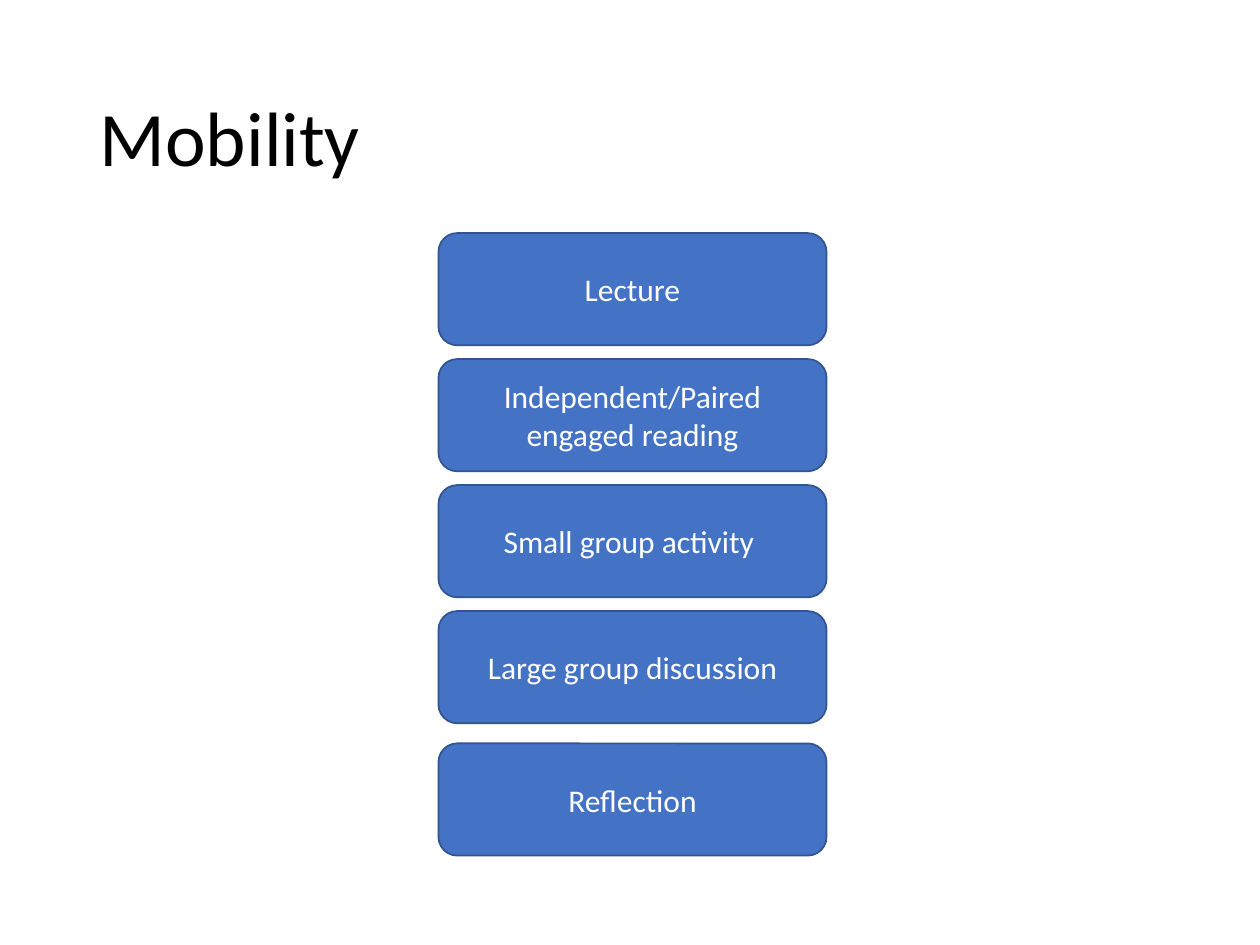
"""Build the Mobility slide: a title above a column of lesson stages."""
from pptx import Presentation
from pptx import util as u
from pptx.dml.color import RGBColor
from pptx.enum import shapes, text

TITLE = "Mobility"
STAGES = [
    ("Lecture", 1.85),
    ("Independent/Paired engaged reading", 2.85),
    ("Small group activity ", 3.85),
    ("Large group discussion", 4.85),
    ("Reflection", 5.9),
]
COLORS = {"title": "000000", "fill": "4472C4", "line": "325491", "label": "FFFFFF"}
STAGE_LEFT, STAGE_WIDTH, STAGE_HEIGHT = 3.48, 3.08, 0.89


def color(role):
    return RGBColor.from_string(COLORS[role])


def write(holder, wording, size, role, align, spacing=1.0):
    frame = holder.text_frame
    frame.word_wrap = True
    frame.auto_size = text.MSO_AUTO_SIZE.NONE
    frame.vertical_anchor = text.MSO_ANCHOR.MIDDLE
    line = frame.paragraphs[0]
    line.alignment = align
    line.line_spacing = spacing
    run = line.add_run()
    run.text = wording
    run.font.name = "Calibri"
    run.font.size = u.Pt(size)
    run.font.color.rgb = color(role)


def add_stage(slide, wording, top):
    stage = slide.shapes.add_shape(
        shapes.MSO_SHAPE.ROUNDED_RECTANGLE,
        *map(u.Inches, (STAGE_LEFT, top, STAGE_WIDTH, STAGE_HEIGHT)))
    stage.shadow.inherit = False
    stage.fill.solid()
    stage.fill.fore_color.rgb = color("fill")
    stage.line.color.rgb = color("line")
    stage.line.width = u.Pt(1)
    write(stage, wording, size=18, role="label", align=text.PP_ALIGN.CENTER)


def main():
    deck = Presentation()
    deck.slide_width, deck.slide_height = u.Inches(10), u.Inches(7.5)
    slide = deck.slides.add_slide(deck.slide_layouts[5])
    heading = slide.shapes.title
    heading.left, heading.top = u.Inches(0.69), u.Inches(0.4)
    heading.width, heading.height = u.Inches(8.62), u.Inches(1.45)
    write(heading, TITLE, size=44, role="title", align=text.PP_ALIGN.LEFT, spacing=0.9)
    for wording, top in STAGES:
        add_stage(slide, wording, top)
    deck.save("out.pptx")


if __name__ == "__main__":
    main()
